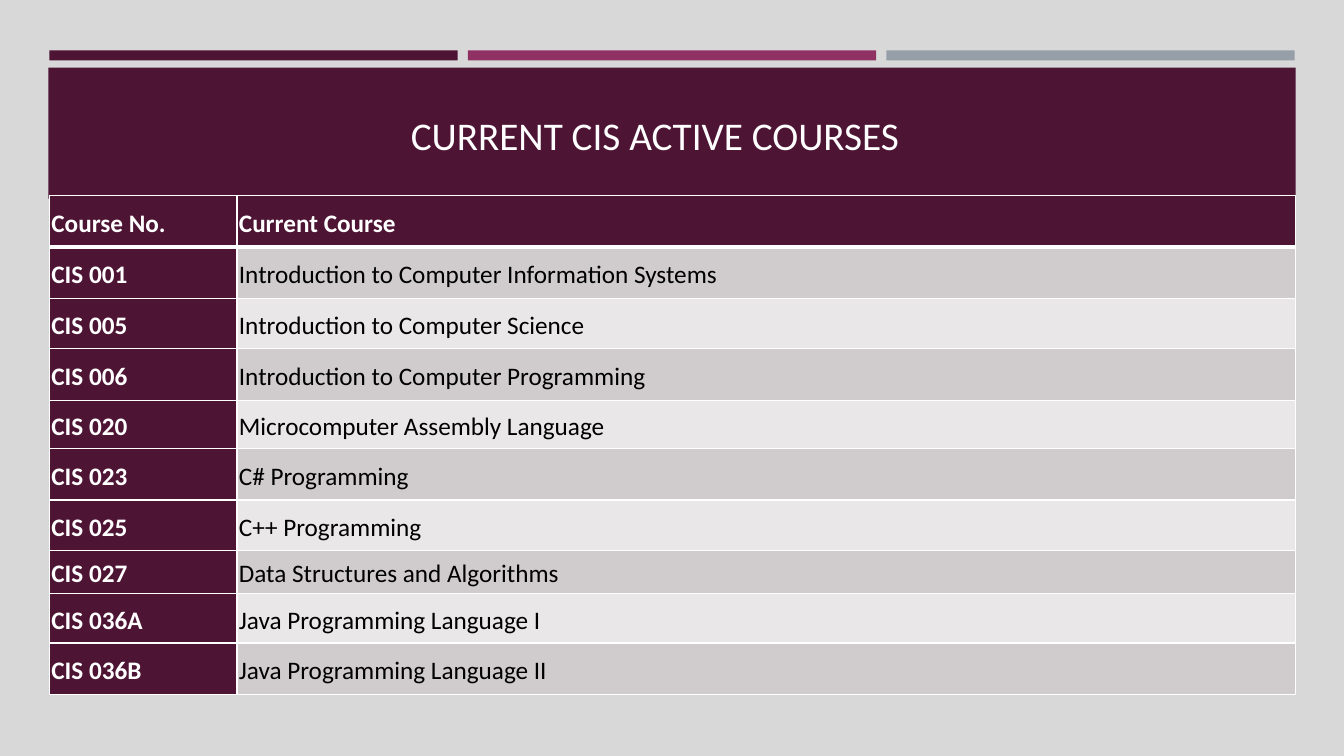
from lxml import etree
from pptx import Presentation
from pptx import util as u
from pptx.dml.color import RGBColor
from pptx.enum import shapes, text
from pptx.oxml import ns

PLUM, WHITE, BLACK = "4D1434", "FFFFFF", "000000"
BANDS = ("E9E7E8", "D0CCCE")
COURSES = [
    ("Course No.", "Current Course"),
    ("CIS 001", "Introduction to Computer Information Systems"),
    ("CIS 005", "Introduction to Computer Science"),
    ("CIS 006", "Introduction to Computer Programming"),
    ("CIS 020", "Microcomputer Assembly Language"),
    ("CIS 023", "C# Programming"),
    ("CIS 025", "C++ Programming"),
    ("CIS 027", "Data Structures and Algorithms"),
    ("CIS 036A", "Java Programming Language I"),
    ("CIS 036B", "Java Programming Language II"),
]
COLUMN_WIDTHS = (1.86, 10.5)
ROW_HEIGHTS = (0.51, 0.51, 0.5, 0.51, 0.48, 0.51, 0.5, 0.43, 0.49, 0.51)


def color(value):
    return RGBColor.from_string(value)


def assign(target, values):
    for name, value in values.items():
        setattr(target, name, value)


def inches(**lengths):
    return {name: u.Inches(value) for name, value in lengths.items()}


class CourseSlide:
    font_name = "Calibri"

    def __init__(self, deck, background):
        self.slide = deck.slides.add_slide(deck.slide_layouts[5])
        self.paint(self.slide.background.fill, background)

    def paint(self, fill, value):
        fill.solid()
        fill.fore_color.rgb = color(value)

    def label(self, frame, words, size, ink, paragraph_format, bold=False):
        paragraph = frame.paragraphs[0]
        assign(paragraph, paragraph_format)
        run = paragraph.add_run()
        run.text = words
        assign(run.font, {"name": self.font_name, "size": u.Pt(size), "bold": bold})
        run.font.color.rgb = color(ink)

    def bar(self, left, top, width, height, value):
        box = [u.Inches(n) for n in (left, top, width, height)]
        bar = self.slide.shapes.add_shape(shapes.MSO_SHAPE.RECTANGLE, *box)
        bar.shadow.inherit = False
        self.paint(bar.fill, value)
        bar.line.fill.background()

    def title(self, words):
        title = self.slide.shapes.title
        title._element.getparent().append(title._element)
        assign(title, inches(left=0.14, top=0.78, width=12.71, height=1.11))
        assign(title.text_frame, {
            "word_wrap": True,
            "auto_size": text.MSO_AUTO_SIZE.NONE,
            "vertical_anchor": text.MSO_ANCHOR.MIDDLE,
        })
        self.label(title.text_frame, words, 28, WHITE,
                   {"alignment": text.PP_ALIGN.CENTER})

    def borders(self, cell, widths):
        properties = cell._tc.get_or_add_tcPr()
        for position, (side, points) in enumerate(widths.items()):
            line = etree.Element(ns.qn(f"a:ln{side}"), w=str(u.Pt(points)))
            fill = etree.SubElement(line, ns.qn("a:solidFill"))
            etree.SubElement(fill, ns.qn("a:srgbClr"), val=WHITE)
            properties.insert(position, line)

    def table(self, left, top, rows, widths, heights):
        box = [u.Inches(n) for n in (left, top, sum(widths), sum(heights))]
        table = self.slide.shapes.add_table(len(rows), len(widths), *box).table
        for column, width in zip(table.columns, widths):
            column.width = u.Inches(width)
        for r, (row, height) in enumerate(zip(rows, heights)):
            table.rows[r].height = u.Inches(height)
            for c, words in enumerate(row):
                heading = r == 0 or c == 0
                cell = table.cell(r, c)
                assign(cell, inches(margin_left=0.02, margin_right=0.02,
                                    margin_top=0, margin_bottom=0))
                cell.vertical_anchor = text.MSO_ANCHOR.MIDDLE
                self.paint(cell.fill, PLUM if heading else BANDS[r % 2])
                self.borders(cell, {"L": 1, "R": 1, "T": 3 if r == 1 else 1,
                                    "B": 3 if r == 0 else 1})
                self.label(cell.text_frame, words, 18, WHITE if heading else BLACK,
                           {"line_spacing": 1.15}, heading)


def main():
    deck = Presentation()
    assign(deck, inches(slide_width=13.33, slide_height=7.5))
    page = CourseSlide(deck, "D8D8D8")
    for i, accent in enumerate((PLUM, "903163", "969FA7")):
        page.bar(0.49 + 4.15 * i, 0.5, 4.05, 0.1, accent)
    page.bar(0.48, 0.67, 12.37, 1.3, PLUM)
    page.title("CURRENT CIS ACTIVE COURSES")
    page.table(0.49, 1.94, COURSES, COLUMN_WIDTHS, ROW_HEIGHTS)
    deck.save("out.pptx")


if __name__ == "__main__":
    main()
